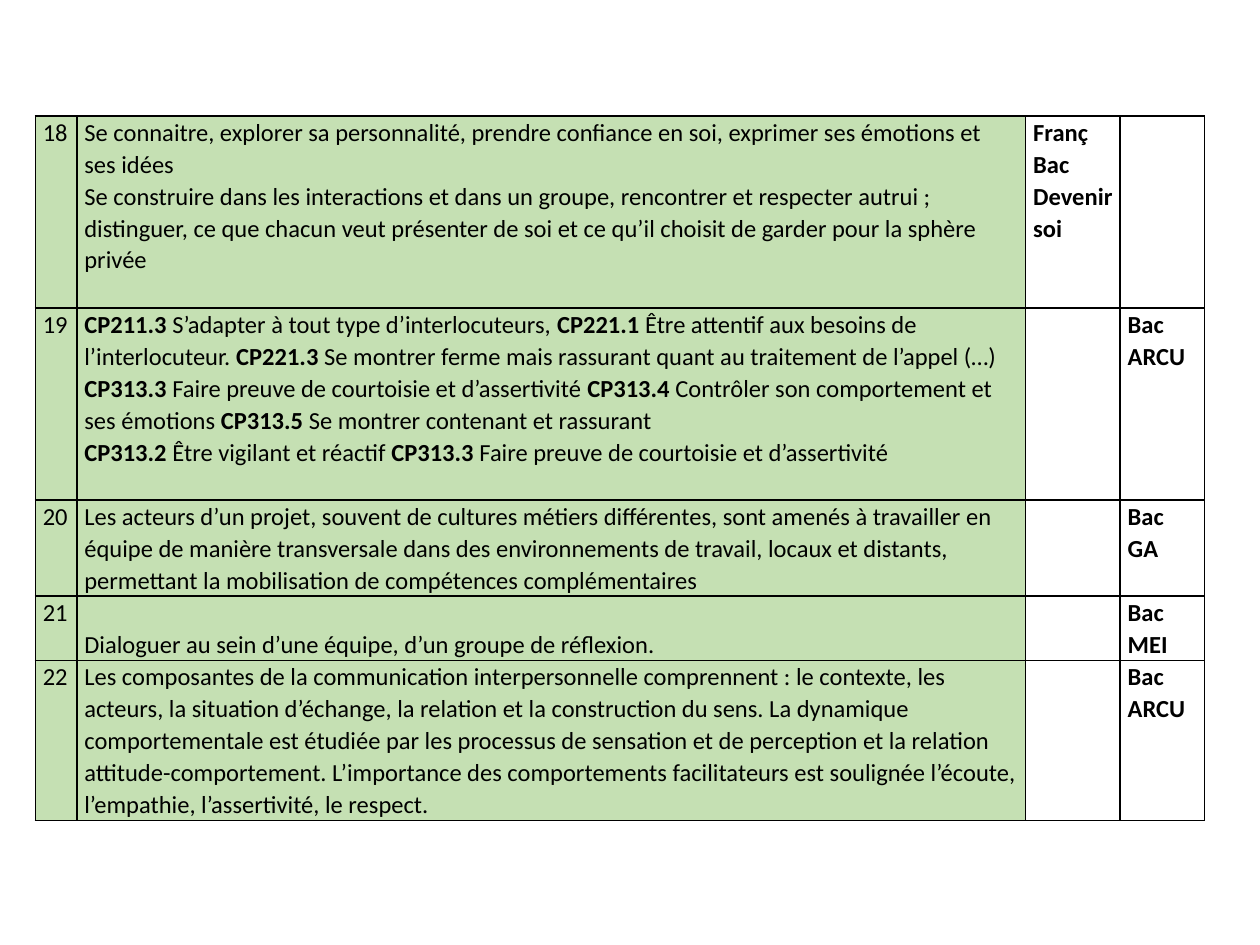
from lxml.etree import SubElement
from pptx import Presentation
from pptx.dml.color import RGBColor
from pptx.oxml.ns import qn
from pptx.util import Inches, Pt

GREEN = RGBColor(0xC5, 0xE0, 0xB3)
WHITE = RGBColor(0xFF, 0xFF, 0xFF)
BLACK = RGBColor(0x00, 0x00, 0x00)

LINE = Pt(18.3)  # height of one text line
COLUMNS = [0.33, 7.53, 0.75, 0.67]
SKILL_COLUMN = 1

# (number, skill paragraphs, French course, diploma, lines in the row, lines above the skill)
# Text between ** is bold.
ROWS = [
    ("18",
     ["Se connaitre, explorer sa personnalité, prendre confiance en soi, "
      "exprimer ses émotions et ses idées",
      "Se construire dans les interactions et dans un groupe, rencontrer et "
      "respecter autrui ; distinguer, ce que chacun veut présenter de soi et "
      "ce qu’il choisit de garder pour la sphère privée"],
     ["**Franç**", "**Bac**", "**Devenir soi**"], [], 6, 0),
    ("19",
     ["**CP211.3 **S’adapter à tout type d’interlocuteurs, "
      "**CP221.1 **Être attentif aux besoins de l’interlocuteur. "
      "**CP221.3 **Se montrer ferme mais rassurant quant au traitement de l’appel (…) "
      "**CP313.3 **Faire preuve de courtoisie et d’assertivité "
      "**CP313.4 **Contrôler son comportement et ses émotions "
      "**CP313.5 **Se montrer contenant et rassurant",
      "**CP313.2 **Être vigilant et réactif "
      "**CP313.3 **Faire preuve de courtoisie et d’assertivité"],
     [], ["**Bac ARCU**"], 6, 0),
    ("20",
     ["Les acteurs d’un projet, souvent de cultures métiers différentes, sont "
      "amenés à travailler en équipe de manière transversale dans des "
      "environnements de travail, locaux et distants, permettant la "
      "mobilisation de compétences complémentaires"],
     [], ["**Bac GA**"], 3, 0),
    ("21",
     ["Dialoguer au sein d’une équipe, d’un groupe de réflexion."],
     [], ["**Bac MEI**"], 2, 1),
    ("22",
     ["Les composantes de la communication interpersonnelle comprennent : le "
      "contexte, les acteurs, la situation d’échange, la relation et la "
      "construction du sens. La dynamique comportementale est étudiée par les "
      "processus de sensation et de perception et la relation "
      "attitude-comportement. L’importance des comportements facilitateurs est "
      "soulignée l’écoute, l’empathie, l’assertivité, le respect."],
     [], ["**Bac ARCU**"], 5, 0),
]


def add_borders(cell):
    tc_pr = cell._tc.get_or_add_tcPr()
    for side in ("a:lnL", "a:lnR", "a:lnT", "a:lnB"):
        ln = SubElement(tc_pr, qn(side), w=str(Pt(1)))
        fill = SubElement(ln, qn("a:solidFill"))
        SubElement(fill, qn("a:srgbClr"), val=str(BLACK))


def write_paragraph(p, text):
    """Fill a paragraph, making the parts between ** bold."""
    p.line_spacing = 1.07
    for i, part in enumerate(text.split("**")):
        if part:
            r = p.add_run()
            r.text = part
            r.font.name = "Calibri"
            r.font.size = Pt(14)
            r.font.bold = i % 2 == 1
            r.font.color.rgb = BLACK


def format_cell(cell, paragraphs, color):
    cell.margin_left = cell.margin_right = Inches(0.06)
    cell.margin_top = cell.margin_bottom = 0
    add_borders(cell)
    cell.fill.solid()
    cell.fill.fore_color.rgb = color
    tf = cell.text_frame
    for i, text in enumerate(paragraphs):
        write_paragraph(tf.add_paragraph() if i else tf.paragraphs[0], text)


def add_skills_table(slide, left, top):
    width = Inches(sum(COLUMNS))
    height = sum(row[4] for row in ROWS) * LINE
    table = slide.shapes.add_table(
        len(ROWS), len(COLUMNS), left, top, width, height).table
    table.first_row = table.horz_banding = False
    for column, column_width in zip(table.columns, COLUMNS):
        column.width = Inches(column_width)
    for r, (number, skill, french, diploma, lines, lines_above) in enumerate(ROWS):
        table.rows[r].height = lines * LINE
        for c, paragraphs in enumerate(([number], skill, french, diploma)):
            format_cell(table.cell(r, c), paragraphs,
                        GREEN if c <= SKILL_COLUMN else WHITE)
        table.cell(r, SKILL_COLUMN).margin_top = lines_above * LINE


def main():
    prs = Presentation()
    prs.slide_width, prs.slide_height = Inches(10), Inches(7.5)
    slide = prs.slides.add_slide(prs.slide_layouts[6])
    add_skills_table(slide, Inches(0.28), Inches(0.92))
    prs.save("out.pptx")


if __name__ == "__main__":
    main()
